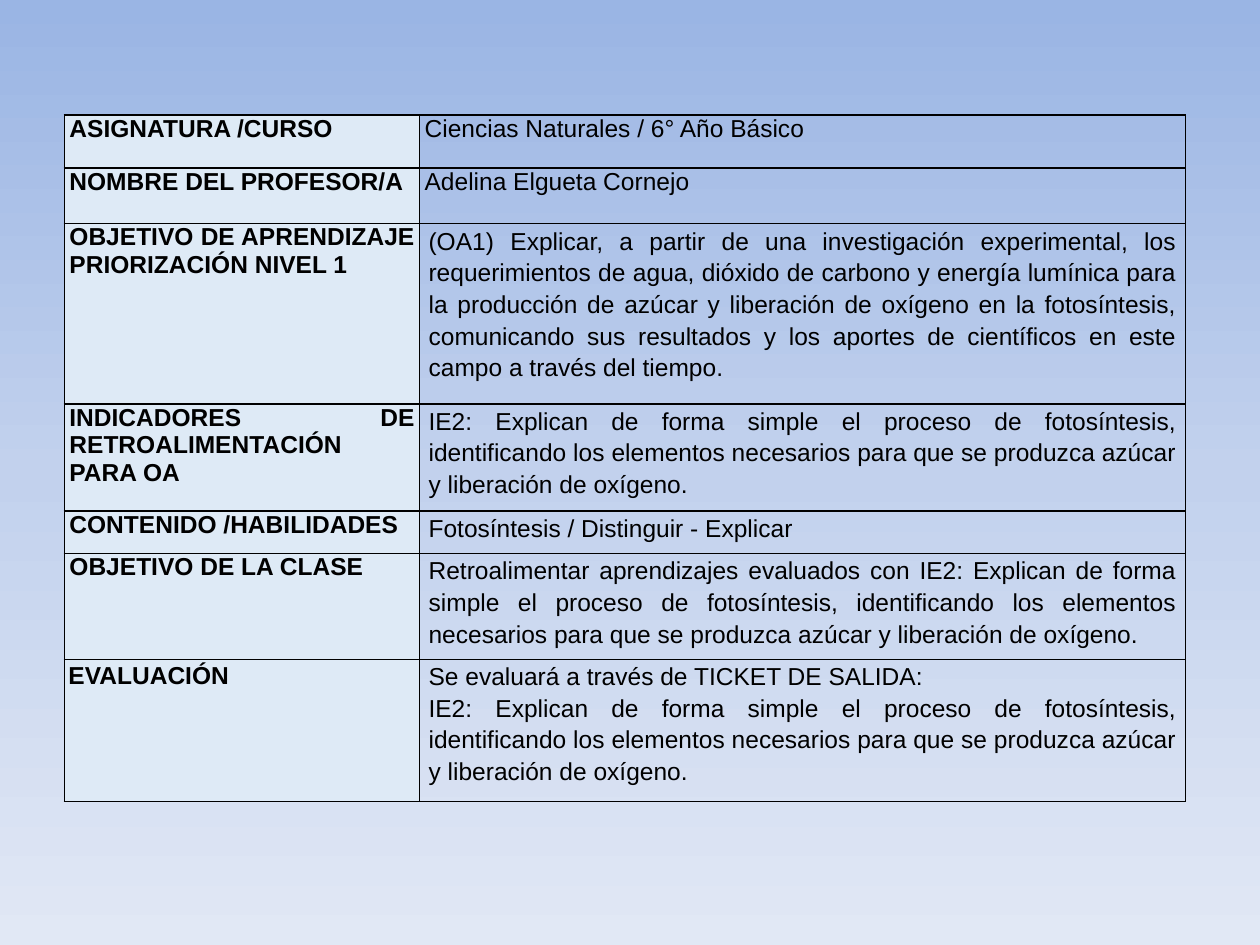
from pptx import Presentation
from pptx.dml.color import RGBColor
from pptx.enum.text import PP_ALIGN
from pptx.oxml.ns import qn
from pptx.util import Cm, Pt
from lxml.etree import SubElement

COLORS = {
    "text": "000000",
    "border": "000000",
    "label": "DEEAF6",
    "sky_top": "9AB5E4",
    "sky_mid": "C2D1ED",
    "sky_low": "E1E8F5",
}

INDICATOR = (
    "Explican de forma simple el proceso de fotosíntesis, identificando los "
    "elementos necesarios para que se produzca azúcar y liberación de oxígeno."
)
NARROW, WIDE, CORNER = (0.1, 0), (0.18, 0), (0.08, 0.05)

ROWS = [
    (1.07, "ASIGNATURA /CURSO", NARROW, "Ciencias Naturales / 6° Año Básico", NARROW, 1.0),
    (1.12, "NOMBRE DEL PROFESOR/A", NARROW, "Adelina Elgueta Cornejo", NARROW, 1.0),
    (3.63, "OBJETIVO DE APRENDIZAJE PRIORIZACIÓN NIVEL 1", NARROW,
     "(OA1) Explicar, a partir de una investigación experimental, los "
     "requerimientos de agua, dióxido de carbono y energía lumínica para la "
     "producción de azúcar y liberación de oxígeno en la fotosíntesis, "
     "comunicando sus resultados y los aportes de científicos en este campo "
     "a través del tiempo.", WIDE, 1.15),
    (2.16, "INDICADORES DE RETROALIMENTACIÓN PARA OA", NARROW,
     f"IE2: {INDICATOR}", WIDE, 1.15),
    (0.86, "CONTENIDO /HABILIDADES", NARROW, "Fotosíntesis / Distinguir - Explicar", WIDE, 1.15),
    (2.13, "OBJETIVO DE LA CLASE", NARROW,
     f"Retroalimentar aprendizajes evaluados con IE2: {INDICATOR}", WIDE, 1.15),
    (2.87, "EVALUACIÓN", CORNER,
     f"Se evaluará a través de TICKET DE SALIDA:\nIE2: {INDICATOR}", WIDE, 1.15),
]


class SlideBuilder:
    font = "Arial"
    size = Pt(14)
    border = Pt(1)

    def __init__(self, slide):
        self.slide = slide

    def background(self, stops):
        fill = self.slide.background.fill
        fill.gradient()
        fill.gradient_angle = 270
        gs_list = self.slide.element.xpath(".//p:bg//a:gsLst")[0]
        gs_list.clear()
        for pos, color in stops:
            gs = SubElement(gs_list, qn("a:gs"), pos=str(pos * 1000))
            SubElement(gs, qn("a:srgbClr"), val=COLORS[color])

    def table(self, left, top, widths, rows):
        heights = [row[0] for row in rows]
        table = self.slide.shapes.add_table(
            len(rows), len(widths), Cm(left), Cm(top), Cm(sum(widths)), Cm(sum(heights))
        ).table
        table.first_row = table.horz_banding = False
        for column, width in zip(table.columns, widths):
            column.width = Cm(width)
        for i, (height, label, label_inset, text, text_inset, spacing) in enumerate(rows):
            table.rows[i].height = Cm(height)
            self.cell(table.cell(i, 0), label, label_inset, bold=True, fill="label")
            self.cell(table.cell(i, 1), text, text_inset, spacing=spacing)

    def cell(self, cell, text, inset, bold=False, fill=None, spacing=1.0):
        cell.margin_left = cell.margin_right = Cm(inset[0])
        cell.margin_top = cell.margin_bottom = Cm(inset[1])
        self.borders(cell)
        if fill:
            cell.fill.solid()
            cell.fill.fore_color.rgb = RGBColor.from_string(COLORS[fill])
        else:
            cell.fill.background()
        cell.text_frame.text = text
        for p in cell.text_frame.paragraphs:
            p.alignment = PP_ALIGN.JUSTIFY
            p.line_spacing = spacing
            for r in p.runs:
                r.font.name = self.font
                r.font.size = self.size
                r.font.bold = bold
                r.font.color.rgb = RGBColor.from_string(COLORS["text"])

    def borders(self, cell):
        tc_pr = cell._tc.get_or_add_tcPr()
        for side in ("a:lnL", "a:lnR", "a:lnT", "a:lnB"):
            ln = SubElement(tc_pr, qn(side), w=str(self.border))
            solid = SubElement(ln, qn("a:solidFill"))
            SubElement(solid, qn("a:srgbClr"), val=COLORS["border"])


def main():
    prs = Presentation()
    prs.slide_width, prs.slide_height = Cm(25.4), Cm(19.05)
    s = SlideBuilder(prs.slides.add_slide(prs.slide_layouts[6]))
    s.background([(0, "sky_top"), (50, "sky_mid"), (100, "sky_low")])
    s.table(1.3, 2.32, [7.16, 15.44], ROWS)
    prs.save("out.pptx")


if __name__ == "__main__":
    main()
